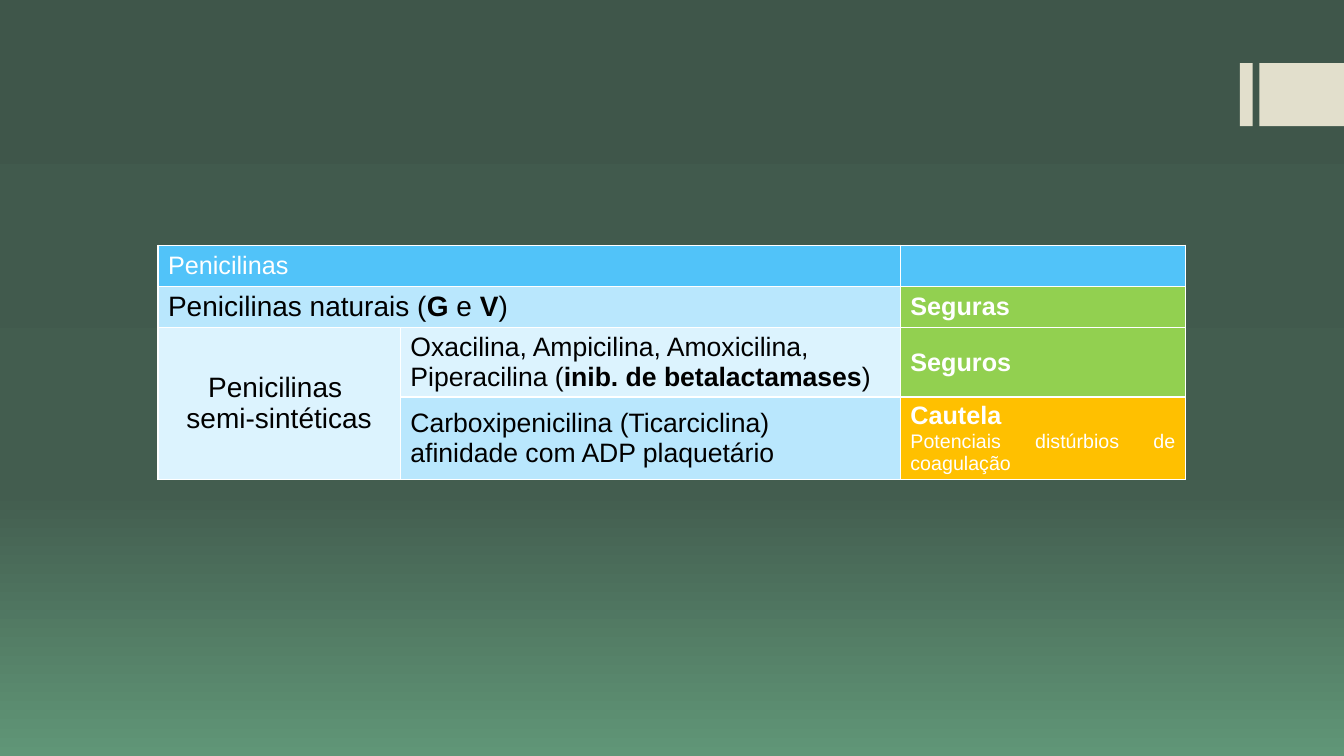
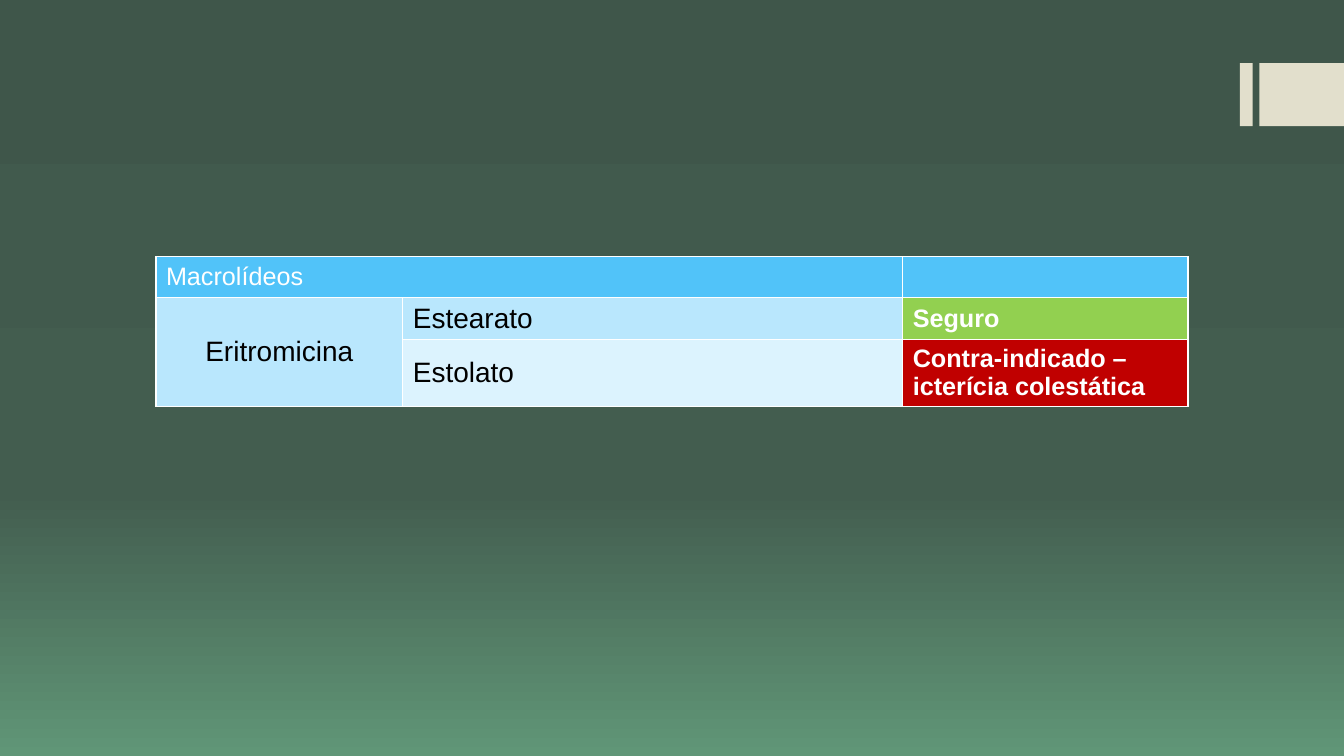
from dataclasses import dataclass
from itertools import product

from lxml import etree
from pptx import Presentation
from pptx.dml.color import RGBColor
from pptx.enum.shapes import MSO_SHAPE
from pptx.enum.text import MSO_ANCHOR, PP_ALIGN
from pptx.oxml import parse_xml
from pptx.oxml.ns import nsdecls, qn
from pptx.util import Cm, Pt

RECT = MSO_SHAPE.RECTANGLE
MIDDLE = MSO_ANCHOR.MIDDLE
LEFT, CENTER, JUSTIFY = PP_ALIGN.LEFT, PP_ALIGN.CENTER, PP_ALIGN.JUSTIFY


@dataclass(frozen=True)
class Theme:
    font: str = "Arial"
    white: str = "FFFFFF"
    black: str = "000000"
    head: str = "51C3F9"
    mid: str = "B9E7FD"
    pale: str = "DCF3FE"
    safe: str = "92D050"
    warn: str = "FFC000"
    stop: str = "C00000"
    band: str = "E2DFCC"
    fade: tuple = ((0, "3F564A"), (65, "435D4F"), (100, "609677"))
    large: int = 20
    body: int = 19
    label: int = 18
    small: int = 14
    rule: int = 1


T = Theme()


def style(cell, color):
    """Give a cell its borders, fill and anchor."""
    props = cell._tc.get_or_add_tcPr()
    for side in ("lnL", "lnR", "lnT", "lnB"):
        line = etree.SubElement(props, qn(f"a:{side}"), w=str(Pt(T.rule)))
        paint = etree.SubElement(line, qn("a:solidFill"))
        etree.SubElement(paint, qn("a:srgbClr"), val=T.white)
    cell.fill.solid()
    cell.fill.fore_color.rgb = RGBColor.from_string(color)
    cell.vertical_anchor = MIDDLE


def write(cell, lines):
    """Write paragraphs; text between asterisks is bold, \\n breaks a line."""
    for i, (text, size, ink, align) in enumerate(lines):
        frame = cell.text_frame
        para = frame.add_paragraph() if i else frame.paragraphs[0]
        para.alignment = align
        for j, part in enumerate(text.split("*")):
            for k, piece in enumerate(part.split("\n")):
                if k:
                    para.add_line_break()
                if piece:
                    run = para.add_run()
                    run.text = piece
                    run.font.name = T.font
                    run.font.size = Pt(size)
                    run.font.bold = j % 2 == 1
                    run.font.color.rgb = RGBColor.from_string(ink)


# Content: left, top, column widths, row heights, then the cells as
# (row, column, rows spanned, columns spanned, fill, paragraphs)
tables = [
    (3.98, 6.18, (6.11, 12.6, 7.19), (0.95, 1.05, 1.74, 2.07), [
        (0, 0, 1, 2, T.head, [("Penicilinas", T.label, T.white, LEFT)]),
        (0, 2, 1, 1, T.head, []),
        (1, 0, 1, 2, T.mid, [
            ("Penicilinas naturais (*G* e *V*)", T.large, T.black, LEFT)]),
        (1, 2, 1, 1, T.safe, [("*Seguras*", T.label, T.white, LEFT)]),
        (2, 0, 2, 1, T.pale, [
            ("Penicilinas ", T.large, T.black, CENTER),
            ("semi-sintéticas", T.large, T.black, CENTER)]),
        (2, 1, 1, 1, T.pale, [
            ("Oxacilina, Ampicilina, Amoxicilina, Piperacilina "
             "(*inib. de betalactamases*)", T.body, T.black, LEFT)]),
        (2, 2, 1, 1, T.safe, [("*Seguros*", T.label, T.white, LEFT)]),
        (3, 1, 1, 1, T.mid, [
            ("Carboxipenicilina (Ticarciclina)\n"
             "afinidade com ADP plaquetário", T.body, T.black, LEFT)]),
        (3, 2, 1, 1, T.warn, [
            ("*Cautela*", T.label, T.white, LEFT),
            ("Potenciais distúrbios de coagulação",
             T.small, T.white, JUSTIFY)]),
    ]),
    (3.93, 6.47, (6.22, 12.6, 7.19), (0.95, 1.05, 1.7), [
        (0, 0, 1, 2, T.head, [("Macrolídeos", T.label, T.white, LEFT)]),
        (0, 2, 1, 1, T.head, []),
        (1, 0, 2, 1, T.mid, [("Eritromicina", T.large, T.black, CENTER)]),
        (1, 1, 1, 1, T.mid, [("Estearato", T.large, T.black, LEFT)]),
        (1, 2, 1, 1, T.safe, [("*Seguro*", T.label, T.white, LEFT)]),
        (2, 1, 1, 1, T.pale, [("Estolato", T.large, T.black, LEFT)]),
        (2, 2, 1, 1, T.stop, [
            ("*Contra-indicado – icterícia colestática*",
             T.label, T.white, LEFT)]),
    ]),
]

deck = Presentation()
deck.slide_width, deck.slide_height = Cm(33.87), Cm(19.05)
master = deck.slide_master
blank = deck.slide_layouts[6]
slides = [deck.slides.add_slide(blank) for _ in tables]

# Shared background: three-stop fade from top to bottom
back = master.background.fill
back.gradient()
back.gradient_angle = 270
stops = master.element.find(".//" + qn("a:gsLst"))
for old in list(stops):
    stops.remove(old)
for spot, color in T.fade:
    stops.append(parse_xml(
        f'<a:gs {nsdecls("a")} pos="{spot * 1000}">'
        f'<a:srgbClr val="{color}"/></a:gs>'))

# Shared bands at the right edge, moved onto the master
for num, (left, width) in enumerate(((31.25, 0.32), (31.74, 2.13))):
    band = slides[0].shapes.add_shape(
        RECT, Cm(left), Cm(1.59), Cm(width), Cm(1.59))
    band.name = f"Band {num + 1}"
    band.shadow.inherit = False
    band.fill.solid()
    band.fill.fore_color.rgb = RGBColor.from_string(T.band)
    band.line.fill.background()
    band.element.nvSpPr.cNvPr.set("id", str(50 + num))
    master.shapes.element.append(band.element)

# One table per slide
for slide, (left, top, cols, rows, cells) in zip(slides, tables):
    grid = slide.shapes.add_table(
        len(rows), len(cols), Cm(left), Cm(top),
        Cm(sum(cols)), Cm(sum(rows))).table
    grid.first_row = grid.horz_banding = False
    for col, width in zip(grid.columns, cols):
        col.width = Cm(width)
    for row, height in zip(grid.rows, rows):
        row.height = Cm(height)
    for r, c, down, across, color, lines in cells:
        cell = grid.cell(r, c)
        for dr, dc in product(range(down), range(across)):
            style(grid.cell(r + dr, c + dc), color)
        if down * across > 1:
            cell.merge(grid.cell(r + down - 1, c + across - 1))
        write(cell, lines)

deck.save("out.pptx")
